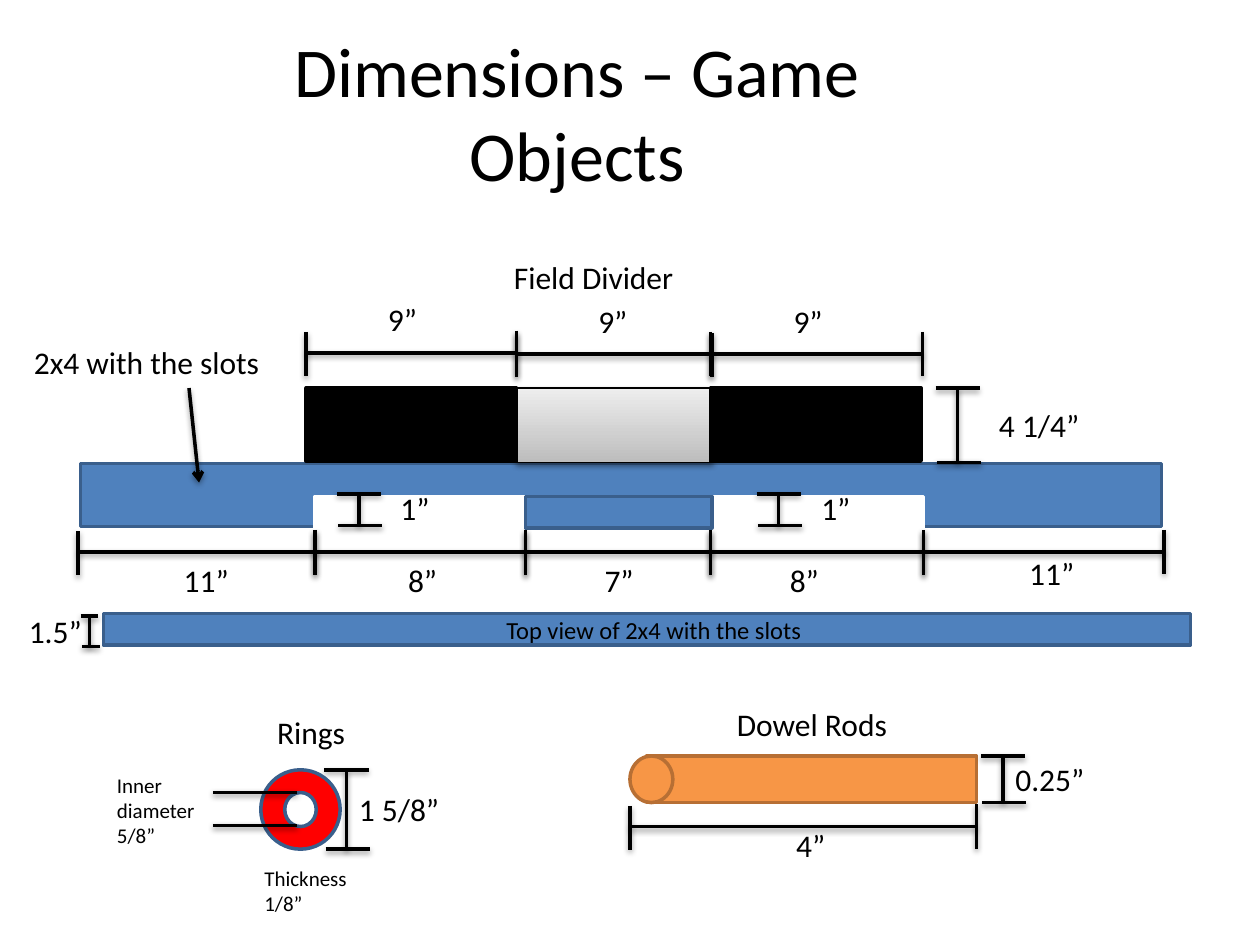
from dataclasses import dataclass

from lxml import etree
from pptx import Presentation
from pptx.dml.color import RGBColor
from pptx.enum import shapes, text
from pptx.oxml import ns
from pptx.util import Inches, Pt

BLACK = RGBColor(0x00, 0x00, 0x00)
WHITE = RGBColor(0xFF, 0xFF, 0xFF)
RED = RGBColor(0xFF, 0x00, 0x00)
BLUE = RGBColor(0x4F, 0x81, 0xBD)
DARK_BLUE = RGBColor(0x3A, 0x5F, 0x8C)
ORANGE = RGBColor(0xF7, 0x96, 0x46)
DARK_ORANGE = RGBColor(0xB7, 0x6F, 0x34)
GREY = RGBColor(0xBD, 0xBD, 0xBD)
LIGHT_GREY = RGBColor(0xEE, 0xEE, 0xEE)

RECT = shapes.MSO_SHAPE.RECTANGLE
OVAL = shapes.MSO_SHAPE.OVAL


@dataclass
class Part:
    x: float
    y: float
    w: float
    h: float
    fill: RGBColor
    line: RGBColor
    kind: shapes.MSO_SHAPE = RECT
    fade: RGBColor | None = None  # upper colour of a gradient


@dataclass
class Span:
    """A dimension line from start to end, at a fixed place on the other axis."""
    start: float
    end: float
    at: float
    vertical: bool = False
    tick: float = 0.35


@dataclass
class Label:
    words: str
    x: float
    y: float
    w: float
    h: float = 0.4
    size: int = 18
    wrap: bool = False
    centred: bool = False


PARTS = [
    # Ring
    Part(2.07, 6.11, 0.63, 0.63, RED, DARK_BLUE, OVAL),
    Part(2.26, 6.29, 0.25, 0.27, WHITE, DARK_BLUE, OVAL),
    # Field divider: 2x4 with slots, and the panels on it
    Part(0.64, 3.68, 8.58, 0.5, BLUE, DARK_BLUE),
    Part(4.1, 3.08, 1.55, 0.59, GREY, BLACK, fade=LIGHT_GREY),
    Part(2.43, 3.08, 1.67, 0.58, BLACK, BLACK),
    Part(5.64, 3.08, 1.67, 0.58, BLACK, BLACK),
    Part(2.5, 3.94, 4.83, 0.25, WHITE, WHITE),
    Part(4.17, 3.94, 1.48, 0.25, BLUE, DARK_BLUE),
    # Top view
    Part(0.82, 4.87, 8.63, 0.25, BLUE, DARK_BLUE),
    # Dowel rod
    Part(5.13, 6, 2.62, 0.37, ORANGE, DARK_ORANGE),
    Part(5, 6, 0.34, 0.37, ORANGE, DARK_ORANGE, OVAL),
]

SLOT_EDGES = [0.62, 2.5, 4.17, 5.64, 7.33, 9.24]
SPANS = [
    *(Span(a, b, 4.38) for a, b in zip(SLOT_EDGES, SLOT_EDGES[1:])),
    Span(2.43, 4.1, 2.8),
    Span(4.1, 5.64, 2.81),
    Span(5.65, 7.32, 2.81),
    Span(5, 7.75, 6.56),
    Span(3.92, 4.17, 2.85, vertical=True),
    Span(3.92, 4.17, 6.18, vertical=True),
    Span(3.08, 3.67, 7.6, vertical=True),
    Span(4.89, 5.13, 0.71, vertical=True, tick=0.14),
    Span(6.11, 6.74, 2.75, vertical=True),
    Span(6, 6.37, 7.96, vertical=True),
]

LABELS = [
    Label("Dimensions – Game Objects", 1.83, 0.17, 5.5, 1.45, 40, True, True),
    Label("Field Divider", 3.98, 2, 1.48),
    Label("2x4 with the slots", 0.17, 2.67, 2.01),
    Label("9”", 2.98, 2.33, 0.44),
    Label("9”", 4.65, 2.35, 0.44),
    Label("9”", 6.2, 2.35, 0.44),
    Label("4 1/4”", 7.83, 3.17, 0.85),
    Label("1”", 3.08, 3.83, 0.44),
    Label("1”", 6.42, 3.83, 0.44),
    Label("11”", 1.36, 4.4, 0.56),
    Label("8”", 3.14, 4.4, 0.44),
    Label("7”", 4.7, 4.4, 0.44),
    Label("8”", 6.17, 4.4, 0.44),
    Label("11”", 8.07, 4.35, 0.56),
    Label("Top view of 2x4 with the slots", 3.92, 4.83, 2.58, 0.34, 14),
    Label("1.5”", 0.13, 4.81, 0.62, wrap=True),
    Label("Rings", 2.1, 5.61, 0.75, wrap=True),
    Label("1 5/8”", 2.75, 6.22, 0.86, wrap=True),
    Label("Inner diameter 5/8”", 0.83, 6.08, 0.86, 0.71, 12, True),
    Label("Thickness\v1/8”", 2, 6.82, 0.86, 0.5, 12, True),
    Label("Dowel Rods", 5.75, 5.55, 1.48, wrap=True),
    Label("0.25”", 7.96, 5.98, 0.82, wrap=True),
    Label("4”", 6.22, 6.51, 0.53, wrap=True),
]


def add_shadow(s) -> None:
    effects = etree.SubElement(s._element.spPr, ns.qn("a:effectLst"))
    shadow = etree.SubElement(effects, ns.qn("a:outerShdw"), blurRad="40000",
                              dist="20000", dir="5400000", rotWithShape="0")
    color = etree.SubElement(shadow, ns.qn("a:srgbClr"), val="000000")
    etree.SubElement(color, ns.qn("a:alpha"), val="38000")


def draw_part(slide, part: Part) -> None:
    s = slide.shapes.add_shape(part.kind, Inches(part.x), Inches(part.y),
                               Inches(part.w), Inches(part.h))
    s.line.color.rgb = part.line
    s.line.width = Pt(2)
    if part.fade is None:
        s.shadow.inherit = False
        s.fill.solid()
        s.fill.fore_color.rgb = part.fill
        return
    s.line.width = Pt(0.75)
    s.fill.gradient()
    s.fill.gradient_angle = 90
    for stop, color in zip(s.fill.gradient_stops, (part.fill, part.fade)):
        stop.color.rgb = color
    add_shadow(s)


def draw_line(slide, x1: float, y1: float, x2: float, y2: float, arrow: bool = False) -> None:
    s = slide.shapes.add_connector(shapes.MSO_CONNECTOR.STRAIGHT, Inches(x1),
                                   Inches(y1), Inches(x2), Inches(y2))
    s.line.color.rgb = BLACK
    s.line.width = Pt(2)
    if arrow:
        etree.SubElement(s.line._get_or_add_ln(), ns.qn("a:tailEnd"), type="arrow")
    add_shadow(s)


def draw_span(slide, span: Span) -> None:
    # The tick nearer the bottom or left sits slightly off centre
    shifts = (0, 0.01) if span.vertical else (0.01, 0)
    low = span.at - span.tick / 2
    strokes = [(span.start, span.at, span.end, span.at)]
    for place, shift in zip((span.start, span.end), shifts):
        strokes.append((place, low + shift, place, low + shift + span.tick))
    for x1, y1, x2, y2 in strokes:
        if span.vertical:
            x1, y1, x2, y2 = y1, x1, y2, x2
        draw_line(slide, x1, y1, x2, y2)


def draw_label(slide, label: Label) -> None:
    s = slide.shapes.add_textbox(Inches(label.x), Inches(label.y),
                                 Inches(label.w), Inches(label.h))
    tf = s.text_frame
    tf.word_wrap = label.wrap
    tf.text = label.words
    p = tf.paragraphs[0]
    if label.centred:
        p.alignment = text.PP_ALIGN.CENTER
    for r in p.runs:
        r.font.name = "Calibri"
        r.font.size = Pt(label.size)
        r.font.color.rgb = BLACK


def main() -> None:
    prs = Presentation()
    prs.slide_width, prs.slide_height = Inches(10), Inches(7.5)
    slide = prs.slides.add_slide(prs.slide_layouts[6])

    for part in PARTS:
        draw_part(slide, part)
    for span in SPANS:
        draw_span(slide, span)

    # Inner diameter of the ring, and the pointer to the 2x4
    for y in (6.29, 6.55):
        draw_line(slide, 1.69, y, 2.36, y)
    draw_line(slide, 1.5, 3.08, 1.58, 3.83, arrow=True)

    for label in LABELS:
        draw_label(slide, label)
    prs.save("out.pptx")


if __name__ == "__main__":
    main()
